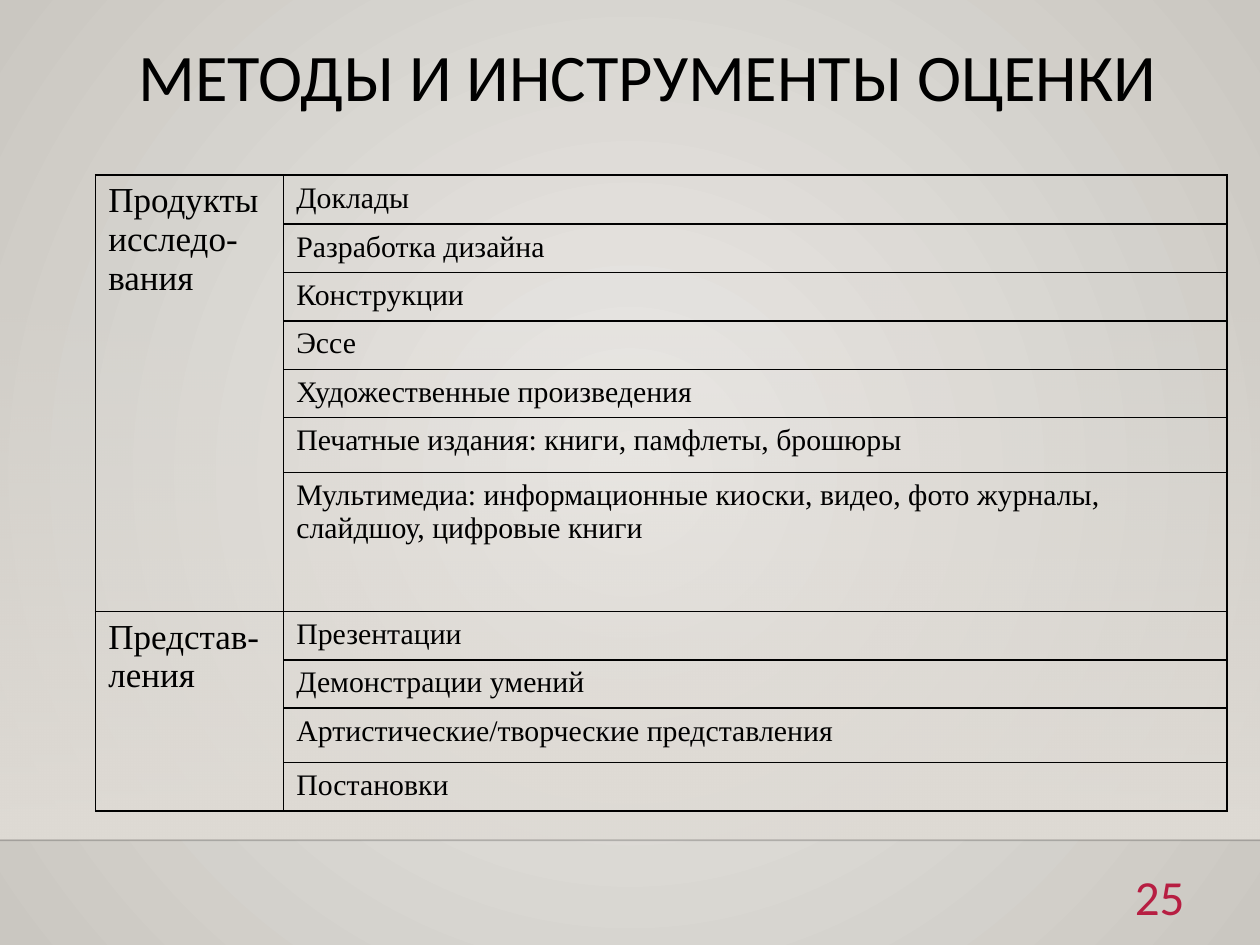
from dataclasses import dataclass

from lxml import etree
from pptx import Presentation
from pptx.dml.color import RGBColor
from pptx.enum.shapes import MSO_CONNECTOR, MSO_SHAPE
from pptx.enum.text import PP_ALIGN
from pptx.oxml.ns import qn
from pptx.util import Cm, Pt

LEFT, RIGHT = PP_ALIGN.LEFT, PP_ALIGN.RIGHT
RECTANGLE = MSO_SHAPE.RECTANGLE
STRAIGHT = MSO_CONNECTOR.STRAIGHT


@dataclass(frozen=True)
class Theme:
    ink: str = "000000"
    accent: str = "B71E42"
    glow: str = "ECEAE7"
    edge: str = "CAC7C1"
    veil: str = "DFDBD5"
    heading_font: str = "Calibri"
    table_font: str = "Times New Roman"
    title_size: float = 38
    number_size: float = 28
    group_size: float = 20
    item_size: float = 17
    rule_width: float = 1


GROUPS = [
    (["Продукты исследо-", "вания"], [
        ("Доклады", 0.99),
        ("Разработка дизайна", 0.93),
        ("Конструкции", 0.93),
        ("Эссе", 0.93),
        ("Художественные произведения", 0.93),
        ("Печатные издания: книги, памфлеты, брошюры", 1.11),
        ("Мультимедиа: информационные киоски, видео, фото журналы, "
         "слайдшоу, цифровые книги", 2.6),
    ]),
    (["Представ-ления"], [
        ("Презентации", 0.93),
        ("Демонстрации умений", 0.93),
        ("Артистические/творческие представления", 1.1),
        ("Постановки", 0.93),
    ]),
]


def write(frame, lines, *, font, size, color, align=LEFT, spacing=None):
    """Fill a text frame with one paragraph per line."""
    frame.word_wrap = True
    for index, line in enumerate(lines):
        paragraph = frame.paragraphs[0] if index == 0 else frame.add_paragraph()
        paragraph.alignment = align
        if spacing:
            paragraph.line_spacing = spacing
        run = paragraph.add_run()
        run.text = line
        run.font.name = font
        run.font.size = Pt(size)
        run.font.color.rgb = RGBColor.from_string(color)


def set_alpha(color_element, percent):
    etree.SubElement(color_element, qn("a:alpha"), val=str(percent * 1000))


def set_gradient(fill, start, end):
    fill.gradient()
    for stop, color, position in zip(fill.gradient_stops, (start, end), (0, 1)):
        stop.color.rgb = RGBColor.from_string(color)
        stop.position = position


class SlideBuilder:
    def __init__(self, slide, theme):
        self.slide = slide
        self.theme = theme

    def radial_background(self):
        set_gradient(self.slide.background.fill, self.theme.glow, self.theme.edge)
        gradient = next(self.slide._element.iter(qn("a:gradFill")))
        gradient.remove(gradient.find(qn("a:lin")))
        circle = etree.SubElement(gradient, qn("a:path"), path="circle")
        etree.SubElement(circle, qn("a:fillToRect"),
                         l="50000", t="50000", r="50000", b="50000")

    def veil(self, left, top, width, height):
        """A band that fades in from top to bottom."""
        band = self.slide.shapes.add_shape(
            RECTANGLE, Cm(left), Cm(top), Cm(width), Cm(height))
        band.shadow.inherit = False
        band.line.fill.background()
        set_gradient(band.fill, self.theme.veil, self.theme.veil)
        band.fill.gradient_angle = 270
        set_alpha(next(band._element.iter(qn("a:srgbClr"))), 0)

    def rule(self, left, top, width):
        line = self.slide.shapes.add_connector(
            STRAIGHT, Cm(left), Cm(top), Cm(left + width), Cm(top))
        line.line.width = Pt(self.theme.rule_width)
        line.line.color.rgb = RGBColor.from_string(self.theme.ink)
        set_alpha(next(line._element.iter(qn("a:srgbClr"))), 20)
        etree.SubElement(line._element.spPr, qn("a:effectLst"))

    def text(self, content, left, top, width, height, **style):
        box = self.slide.shapes.add_textbox(
            Cm(left), Cm(top), Cm(width), Cm(height))
        write(box.text_frame, [content], font=self.theme.heading_font, **style)

    def border(self, cell):
        properties = cell._tc.get_or_add_tcPr()
        for side in ("a:lnL", "a:lnR", "a:lnT", "a:lnB"):
            edge = etree.SubElement(properties, qn(side),
                                    w=str(Pt(self.theme.rule_width)))
            solid = etree.SubElement(edge, qn("a:solidFill"))
            etree.SubElement(solid, qn("a:srgbClr"), val=self.theme.ink)

    def grouped_table(self, groups, left, top, widths):
        items = [item for _, members in groups for item in members]
        table = self.slide.shapes.add_table(
            len(items), 2, Cm(left), Cm(top), Cm(sum(widths)),
            Cm(sum(height for _, height in items))).table
        table.first_row = table.horz_banding = False
        for column, width in zip(table.columns, widths):
            column.width = Cm(width)
        for cell in table.iter_cells():
            self.border(cell)
            cell.fill.background()
        style = {"font": self.theme.table_font, "color": self.theme.ink}

        # Items, one per row
        for index, (name, height) in enumerate(items):
            table.rows[index].height = Cm(height)
            write(table.cell(index, 1).text_frame, [name],
                  size=self.theme.item_size, **style)

        # Group names, merged down their items
        first = 0
        for heading, members in groups:
            last = first + len(members) - 1
            group = table.cell(first, 0)
            group.merge(table.cell(last, 0))
            write(group.text_frame, heading, size=self.theme.group_size, **style)
            first = last + 1


def main():
    deck = Presentation()
    deck.slide_width, deck.slide_height = Cm(25.4), Cm(19.05)
    theme = Theme()
    builder = SlideBuilder(deck.slides.add_slide(deck.slide_layouts[6]), theme)

    # Backdrop
    builder.radial_background()
    builder.veil(0, 5.59, 25.4, 11.34)
    builder.rule(0, 16.94, 25.4)

    # Page number and title
    builder.text("25", 18.85, 17.35, 5.28, 1.27, size=theme.number_size,
                 color=theme.accent, align=RIGHT)
    builder.text("МЕТОДЫ И ИНСТРУМЕНТЫ ОЦЕНКИ", 2.54, 0.76, 21.59, 3.18,
                 size=theme.title_size, color=theme.ink, spacing=0.9)

    # Assessment methods
    builder.grouped_table(GROUPS, 1.93, 3.53, (3.79, 19.01))

    deck.save("out.pptx")


if __name__ == "__main__":
    main()
